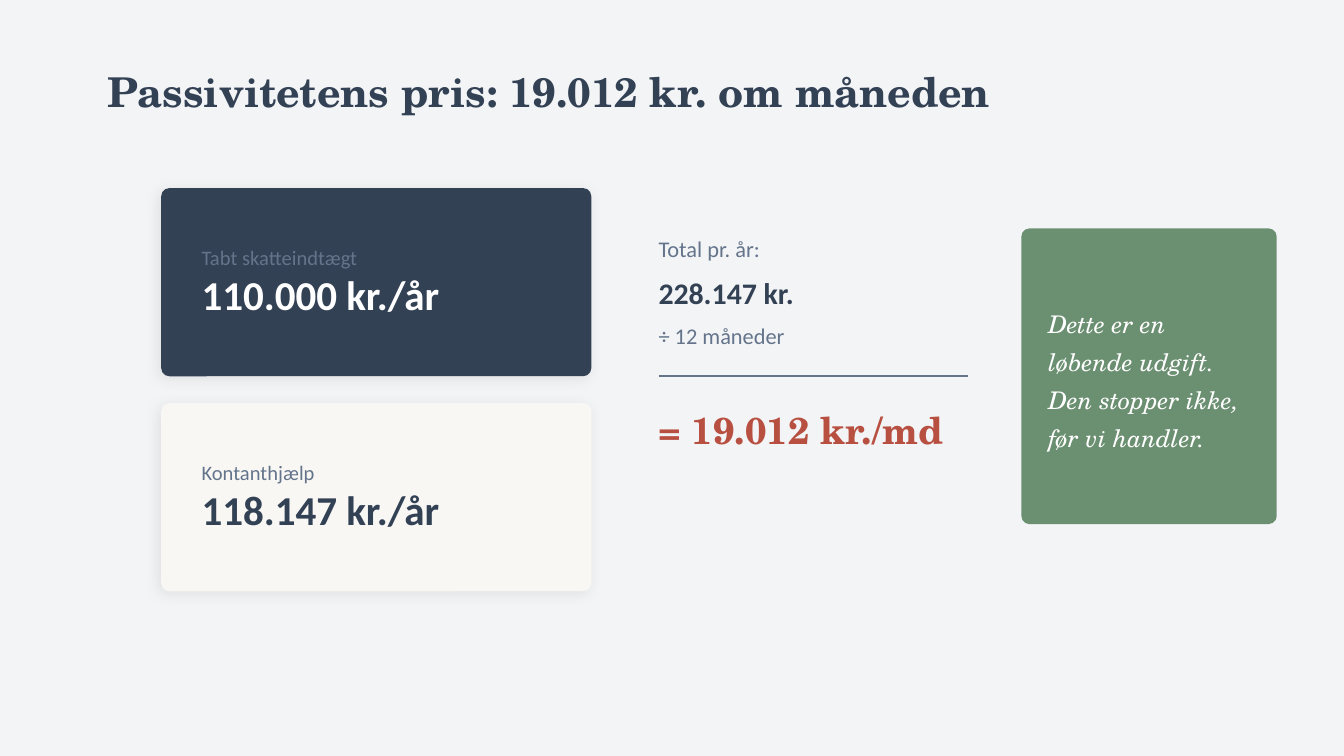
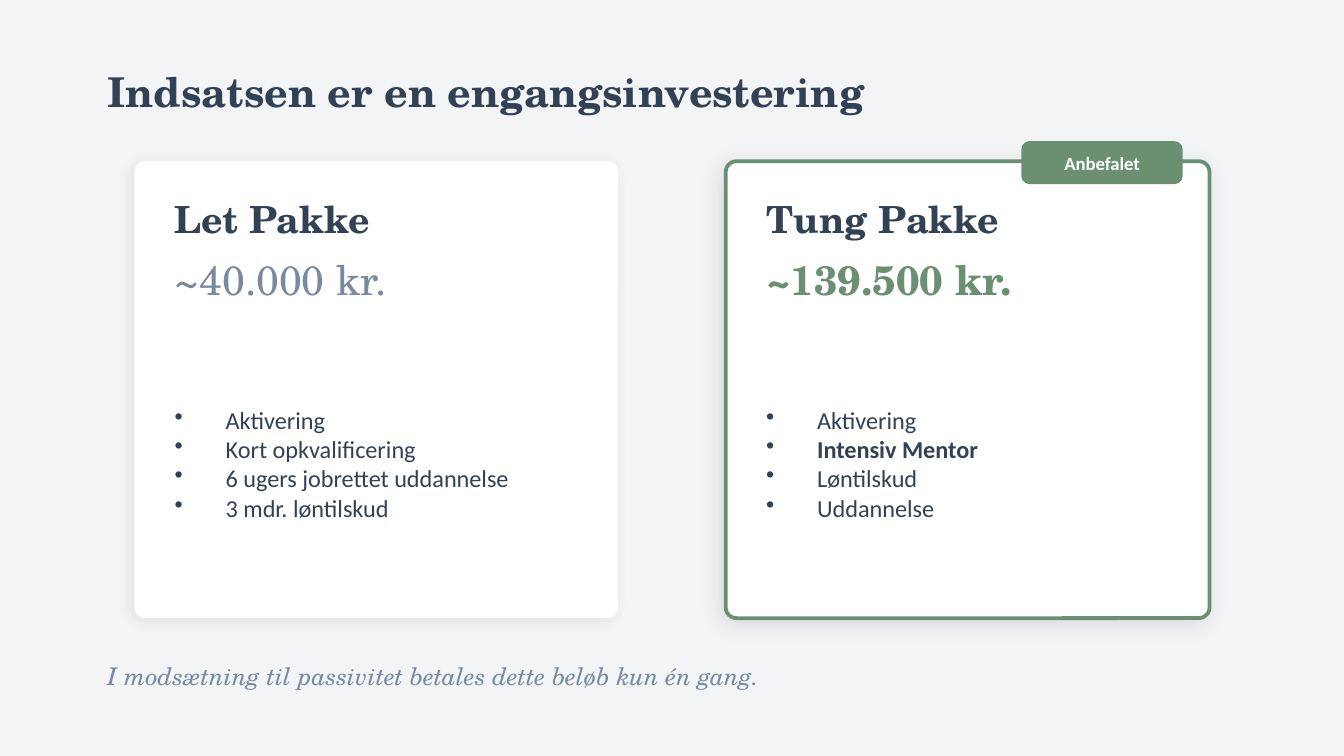
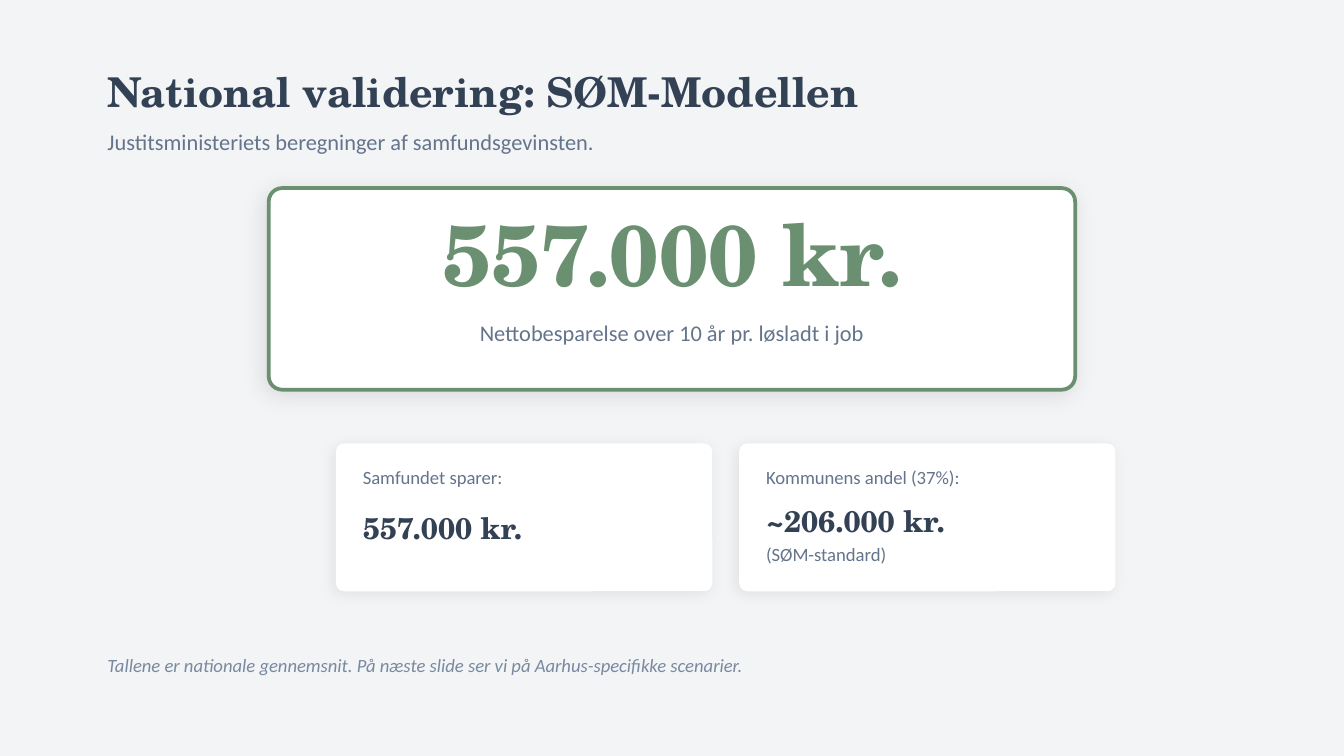
from typing import NamedTuple

from lxml.etree import SubElement as Sub
from pptx import Presentation
from pptx.dml.color import RGBColor
from pptx.enum.shapes import MSO_CONNECTOR as Link, MSO_SHAPE as Shape
from pptx.enum.text import MSO_ANCHOR as Anchor, MSO_AUTO_SIZE as Fit, PP_ALIGN as Align
from pptx.oxml.ns import qn
from pptx.util import Inches, Pt

# Colours
MIST = RGBColor(0xF3, 0xF4, 0xF6)
NAVY = RGBColor(0x33, 0x41, 0x55)
SLATE = RGBColor(0x64, 0x74, 0x8B)
STEEL = RGBColor(0x78, 0x89, 0xA0)
CREAM = RGBColor(0xF8, 0xF7, 0xF4)
GREEN = RGBColor(0x6B, 0x8F, 0x71)
RUST = RGBColor(0xB8, 0x50, 0x42)
WHITE = RGBColor(0xFF, 0xFF, 0xFF)

SANS = "Calibri"
SERIF = "TeX Gyre Schola"

# Grid: 100 columns over a slide 10 inches wide, with square cells
CELL = Inches(10) // 100
WIDE, HIGH = 100, 56.25
EDGE = 8
SPAN = WIDE - 2 * EDGE

# Shadows: opacity in percent, blur and distance in points
SOFT = (8, 8, 2)
DEEP = (10, 12, 3)


class Face(NamedTuple):
    size: int
    color: RGBColor
    font: str = SANS
    bold: bool = False
    slant: bool = False


TITLE = Face(22, NAVY, SERIF, True)
HEAD = Face(20, NAVY, SERIF, True)
SUM = Face(16, NAVY, SERIF, True)
BODY = Face(13, NAVY)
NOTE = Face(12, SLATE)
LABEL = Face(11, SLATE)
SMALL = Face(10, SLATE)


def grid(*cells):
    return [round(n * CELL) for n in cells]


class Deck:
    def __init__(self):
        self.prs = Presentation()
        self.prs.slide_width, self.prs.slide_height = grid(WIDE, HIGH)
        fill = self.prs.slide_master.background.fill
        fill.solid()
        fill.fore_color.rgb = MIST

    def page(self, title):
        self.slide = self.prs.slides.add_slide(self.prs.slide_layouts[5])
        box = self.slide.shapes.title
        box.left, box.top, box.width, box.height = grid(EDGE, 4, SPAN, 5.5)
        self.fill_in(box, [(title, TITLE)])

    def fill_in(self, box, lines, align=Align.LEFT):
        frame = box.text_frame
        frame.word_wrap = True
        frame.auto_size = Fit.NONE
        frame.vertical_anchor = Anchor.MIDDLE
        frame.margin_left = frame.margin_right = 0
        frame.margin_top = frame.margin_bottom = 0
        frame.text = "\n".join(words for words, _ in lines)
        for par, (_, face) in zip(frame.paragraphs, lines):
            par.alignment = align
            for run in par.runs:
                font = run.font
                font.name, font.size = face.font, Pt(face.size)
                font.bold, font.italic = face.bold, face.slant
                font.color.rgb = face.color
        return frame.paragraphs

    def text(self, at, *lines, align=Align.LEFT):
        box = self.slide.shapes.add_textbox(*grid(*at))
        return self.fill_in(box, lines, align)

    def points(self, at, *lines):
        for par in self.text(at, *lines):
            props = par._p.get_or_add_pPr()
            props.set("marL", str(Inches(0.38)))
            props.set("indent", str(-Inches(0.38)))
            Sub(props, qn("a:buChar"), char="•")

    def card(self, at, fill, shade=None, line=None, curve=0.6):
        card = self.slide.shapes.add_shape(Shape.ROUNDED_RECTANGLE, *grid(*at))
        card.adjustments[0] = curve / min(at[2:])
        card.fill.solid()
        card.fill.fore_color.rgb = fill
        if line is None:
            card.line.fill.background()
        else:
            card.line.color.rgb = line
            card.line.width = Pt(2)
        card.shadow.inherit = False
        if shade:
            self.shade(card, *shade)

    def shade(self, card, alpha, blur, dist):
        glow = Sub(card._element.spPr.find(qn("a:effectLst")), qn("a:outerShdw"),
                   blurRad=str(Pt(blur)), dist=str(Pt(dist)),
                   dir=str(135 * 60000), algn="bl", rotWithShape="0")
        tint = Sub(glow, qn("a:srgbClr"), val="000000")
        Sub(tint, qn("a:alpha"), val=str(alpha * 1000))

    def rule(self, left, top, width):
        line = self.slide.shapes.add_connector(
            Link.STRAIGHT, *grid(left, top, left + width, top))
        line.line.color.rgb = SLATE
        line.line.width = Pt(1)
        Sub(line._element.spPr, qn("a:effectLst"))


def price(deck):
    deck.page("Passivitetens pris: 19.012 kr. om måneden")

    # Yearly costs
    costs = [("Tabt skatteindtægt", "110.000 kr./år", NAVY, WHITE),
             ("Kontanthjælp", "118.147 kr./år", CREAM, NAVY)]
    for row, (name, cost, fill, ink) in enumerate(costs):
        top = 14 + 16 * row
        deck.card((12, top, 32, 14), fill, SOFT)
        deck.text((15, top + 1, 26, 12), (name, LABEL),
                  (cost, Face(22, ink, bold=True)))

    # Sum per month
    deck.text((49, 17, 23, 3), ("Total pr. år:", NOTE))
    deck.text((49, 20, 23, 3.5), ("228.147 kr.", Face(16, NAVY, bold=True)))
    deck.text((49, 23.5, 23, 3), ("÷ 12 måneder", NOTE))
    deck.rule(49, 28, 23)
    deck.text((49, 29.5, 25, 5), ("= 19.012 kr./md", Face(20, RUST, SERIF, True)))

    # Remark
    deck.card((76, 17, 19, 22), GREEN)
    pars = deck.text((78, 19, 15, 18), (
        "Dette er en løbende udgift. Den stopper ikke, før vi handler.",
        Face(13, WHITE, SERIF, slant=True)))
    pars[0].line_spacing = 1.3


def packs(deck):
    deck.page("Indsatsen er en engangsinvestering")
    strong = Face(13, NAVY, bold=True)

    # Two packages
    light = [("Aktivering", BODY), ("Kort opkvalificering", BODY),
             ("6 ugers jobrettet uddannelse", BODY), ("3 mdr. løntilskud", BODY)]
    heavy = [("Aktivering", BODY), ("Intensiv Mentor", strong),
             ("Løntilskud", BODY), ("Uddannelse", BODY)]
    offers = [
        ("Let Pakke", "~40.000 kr.", Face(22, STEEL, SERIF), light, SOFT, None),
        ("Tung Pakke", "~139.500 kr.", Face(22, GREEN, SERIF, True), heavy, DEEP, GREEN)]
    for col, (name, cost, face, items, shade, line) in enumerate(offers):
        left = 10 + 44 * col
        deck.card((left, 12, 36, 34), WHITE, shade, line, curve=0.8)
        deck.text((left + 3, 14, 30, 4.5), (name, HEAD))
        deck.text((left + 3, 18.5, 30, 4.5), (cost, face))
        deck.points((left + 3, 25.5, 30, 18), *items)

    # Badge
    badge = (76, 10.5, 12, 3.2)
    deck.card(badge, GREEN)
    deck.text(badge, ("Anbefalet", Face(10, WHITE, bold=True)), align=Align.CENTER)

    deck.text((EDGE, 48.5, SPAN, 3.5), (
        "I modsætning til passivitet betales dette beløb kun én gang.",
        Face(13, STEEL, SERIF, slant=True)))


def model(deck):
    deck.page("National validering: SØM-Modellen")
    deck.text((EDGE, 9, SPAN, 3),
              ("Justitsministeriets beregninger af samfundsgevinsten.", NOTE))

    # Main figure
    deck.card((20, 14, 60, 15), WHITE, DEEP, GREEN, curve=1)
    deck.text((25, 14.5, 50, 8.5), ("557.000 kr.", Face(46, GREEN, SERIF, True)),
              align=Align.CENTER)
    deck.text((25, 23, 50, 3.5), ("Nettobesparelse over 10 år pr. løsladt i job", NOTE),
              align=Align.CENTER)

    # Shares
    shares = [("Samfundet sparer:", "557.000 kr.", 4.5),
              ("Kommunens andel (37%):", "~206.000 kr.", 3.5)]
    for col, (name, cost, high) in enumerate(shares):
        left = 25 + 30 * col
        deck.card((left, 33, 28, 11), WHITE, SOFT)
        deck.text((left + 2, 34, 24, 3), (name, SMALL))
        deck.text((left + 2, 37, 24, high), (cost, SUM))
    deck.text((57, 40, 24, 2.5), ("(SØM-standard)", SMALL))

    deck.text((EDGE, 48, SPAN, 3), (
        "Tallene er nationale gennemsnit. På næste slide ser vi på "
        "Aarhus-specifikke scenarier.", Face(10, STEEL, slant=True)))


def main():
    deck = Deck()
    price(deck)
    packs(deck)
    model(deck)
    deck.prs.save("out.pptx")


if __name__ == "__main__":
    main()
